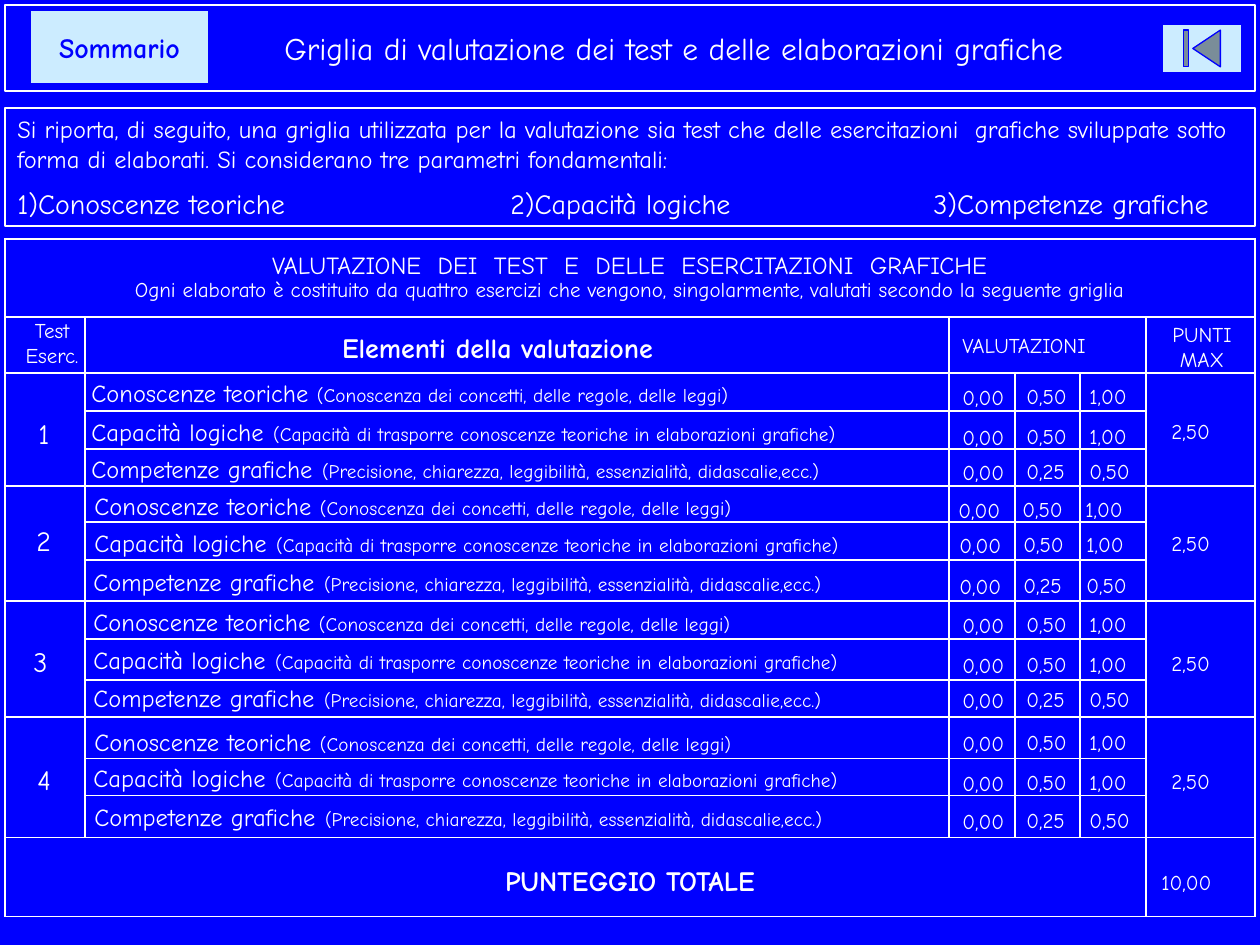
from dataclasses import dataclass

from lxml import etree
from pptx import Presentation
from pptx import util as u
from pptx.dml.color import RGBColor
from pptx.enum import shapes, text
from pptx.oxml import ns

EMU_PER_PX = 914400 / 126
CENTER, LEFT = text.PP_ALIGN.CENTER, text.PP_ALIGN.LEFT


@dataclass(frozen=True)
class Theme:
    font: str = "Comic Neue"
    blue: RGBColor = RGBColor(0, 0, 255)
    white: RGBColor = RGBColor(255, 255, 255)
    button: RGBColor = RGBColor(0xCC, 0xEC, 0xFF)
    title: int = 18
    large: int = 16
    body: int = 14
    small: int = 12
    detail: int = 11


@dataclass(frozen=True)
class Criterion:
    name: str
    detail: str
    gap_size: int
    height: int
    scores: tuple[str, str, str]


@dataclass(frozen=True)
class Row:
    label_x: int
    label_y: int
    score_x: int
    score_y: int


@dataclass(frozen=True)
class Exercise:
    number: str
    x: int
    y: int
    points_y: int
    rows: tuple[Row, Row, Row]


T = Theme()

CRITERIA = (
    Criterion("Conoscenze teoriche", "(Conoscenza dei concetti, delle regole, delle leggi)",
              T.body, 42, ("0,00", "0,50", "1,00")),
    Criterion("Capacità logiche",
              "(Capacità di trasporre conoscenze teoriche in elaborazioni grafiche)",
              T.large, 46, ("0,00", "0,50", "1,00")),
    Criterion("Competenze grafiche",
              "(Precisione, chiarezza, leggibilità, essenzialità, didascalie,ecc.)",
              T.large, 46, ("0,00", "0,25", "0,50")),
)
EXERCISES = (
    Exercise("1", 26, 410, 412,
             (Row(79, 372, 950, 377), Row(79, 407, 950, 417), Row(79, 444, 950, 452))),
    Exercise("2", 24, 517, 524,
             (Row(82, 485, 946, 490), Row(82, 518, 947, 525), Row(81, 557, 947, 566))),
    Exercise("3", 21, 638, 644,
             (Row(81, 601, 950, 605), Row(81, 635, 950, 645), Row(81, 673, 950, 680))),
    Exercise("4", 25, 756, 762,
             (Row(82, 721, 950, 723), Row(81, 753, 950, 763), Row(82, 792, 950, 801))),
)
COLUMNS = (80, 864, 66, 65, 66, 109)
ROW_HEIGHTS = (78, 56, 38, 38, 37, 36, 38, 41, 38, 41, 37, 42, 37, 42, 79)


def px(value: int) -> int:
    return u.Emu(round(value * EMU_PER_PX))


def box(x: int, y: int, w: int, h: int) -> tuple[int, ...]:
    return tuple(px(v) for v in (x, y, w, h))


def style(p, size: int, align=LEFT, bold: bool = False, color: RGBColor = T.white) -> None:
    p.alignment = align
    p.font.name, p.font.size, p.font.bold = T.font, u.Pt(size), bold
    p.font.color.rgb = color


def add_text(s, words: str, x: int, y: int, w: int, h: int, size: int,
             align=LEFT, bold: bool = False):
    tf = s.shapes.add_textbox(*box(x, y, w, h)).text_frame
    tf.word_wrap = True
    tf.auto_size = text.MSO_AUTO_SIZE.SHAPE_TO_FIT_TEXT
    p = tf.paragraphs[0]
    p.text = words
    style(p, size, align, bold)
    return p


def add_button(s, kind, x: int, y: int, w: int, h: int):
    sp = s.shapes.add_shape(kind, *box(x, y, w, h))
    sp.shadow.inherit = False
    sp.fill.solid()
    sp.fill.fore_color.rgb = T.button
    sp.line.color.rgb = T.blue
    sp.line.width = 0
    return sp


def outline_cell(cell) -> None:
    props = cell._tc.get_or_add_tcPr()
    for side in ("a:lnL", "a:lnR", "a:lnT", "a:lnB"):
        line = etree.SubElement(props, ns.qn(side), w=str(u.Pt(1)))
        fill = etree.SubElement(line, ns.qn("a:solidFill"))
        etree.SubElement(fill, ns.qn("a:srgbClr"), val=str(T.white))
    cell.fill.background()


def add_grid(s) -> None:
    frame = s.shapes.add_table(len(ROW_HEIGHTS), len(COLUMNS),
                               *box(5, 239, sum(COLUMNS), sum(ROW_HEIGHTS)))
    table = frame.table
    table.first_row = table.horz_banding = False
    for column, width in zip(table.columns, COLUMNS):
        column.width = px(width)
    for row, height in zip(table.rows, ROW_HEIGHTS):
        row.height = px(height)
    for cell in table.iter_cells():
        outline_cell(cell)
        cell.margin_top = cell.margin_bottom = 0
        style(cell.text_frame.paragraphs[0], T.small)

    # Merged areas: heading, scores, exercises, points, total
    spans = [(0, 0, 0, 5), (1, 2, 1, 4), (14, 0, 14, 4)]
    spans += [(r, c, r + 2, c) for r in range(2, 14, 3) for c in (0, 5)]
    for top, left, bottom, right in spans:
        table.cell(top, left).merge(table.cell(bottom, right))

    heading = table.cell(0, 0)
    heading.vertical_anchor = text.MSO_ANCHOR.MIDDLE
    heading.text = ("VALUTAZIONE  DEI  TEST  E  DELLE  ESERCITAZIONI  GRAFICHE\n"
                    "Ogni elaborato è costituito da quattro esercizi che vengono, "
                    "singolarmente, valutati secondo la seguente griglia")
    for p, size in zip(heading.text_frame.paragraphs, (T.body, T.small)):
        style(p, size, CENTER)
        p.line_spacing = 0.9


def add_exercise(s, exercise: Exercise) -> None:
    add_text(s, exercise.number, exercise.x, exercise.y, 42, 46, T.large)
    add_text(s, "2,50", 1159, exercise.points_y, 83, 38, T.small)
    for row, criterion in zip(exercise.rows, CRITERIA):
        p = add_text(s, criterion.name, row.label_x, row.label_y, 848, criterion.height, T.body)
        for words, size in ((" ", criterion.gap_size), (criterion.detail, T.detail)):
            r = p.add_run()
            r.text = words
            r.font.size = u.Pt(size)
        for score, dx, dy, width in zip(criterion.scores, (0, 64, 127), (1, 0, 0), (78, 78, 71)):
            add_text(s, score, row.score_x + dx, row.score_y + dy, width, 38, T.small)


def main() -> None:
    prs = Presentation()
    prs.slide_width, prs.slide_height = u.Inches(10), u.Inches(7.5)
    s = prs.slides.add_slide(prs.slide_layouts[5])
    s.background.fill.solid()
    s.background.fill.fore_color.rgb = T.blue

    # Title bar and navigation buttons
    title = s.shapes.title
    title.left, title.top, title.width, title.height = box(5, 5, 1250, 86)
    title.line.color.rgb = T.white
    title.line.width = u.Pt(0.75)
    tf = title.text_frame
    tf.text = "Griglia di valutazione dei test e delle elaborazioni grafiche"
    tf.vertical_anchor = text.MSO_ANCHOR.MIDDLE
    tf.margin_left = px(100)
    style(tf.paragraphs[0], T.title, CENTER)

    summary = add_button(s, shapes.MSO_SHAPE.ACTION_BUTTON_CUSTOM, 30, 10, 179, 74)
    summary.text_frame.text = "Sommario"
    summary.text_frame.vertical_anchor = text.MSO_ANCHOR.MIDDLE
    style(summary.text_frame.paragraphs[0], T.large, CENTER, True, T.blue)
    add_button(s, shapes.MSO_SHAPE.ACTION_BUTTON_BEGINNING, 1162, 24, 80, 49)

    # Introduction and the three parameters
    intro = s.shapes.add_shape(shapes.MSO_SHAPE.RECTANGLE, *box(5, 108, 1250, 118))
    intro.shadow.inherit = False
    intro.fill.background()
    intro.line.color.rgb = T.white
    intro.line.width = u.Pt(1)
    tf = intro.text_frame
    tf.word_wrap = True
    tf.vertical_anchor = text.MSO_ANCHOR.TOP
    tf.text = ("Si riporta, di seguito, una griglia utilizzata per la valutazione sia test che "
               "delle esercitazioni  grafiche sviluppate sotto forma di elaborati. "
               "Si considerano tre parametri fondamentali:")
    style(tf.paragraphs[0], T.body)
    for i, (criterion, x, width) in enumerate(zip(CRITERIA, (5, 498, 921), (328, 265, 334)), 1):
        add_text(s, f"{i}){criterion.name}", x, 180, width, 46, T.large)

    # Evaluation grid with its headings, exercises and total
    add_grid(s)
    add_text(s, "Test Eserc.", 6, 311, 92, 63, T.small, CENTER)
    add_text(s, "Elementi della valutazione", 304, 324, 387, 46, T.large, CENTER, True)
    add_text(s, "VALUTAZIONI", 950, 326, 194, 38, T.small)
    add_text(s, "PUNTI MAX", 1147, 315, 110, 63, T.small, CENTER)
    for exercise in EXERCISES:
        add_exercise(s, exercise)
    add_text(s, "PUNTEGGIO TOTALE", 431, 857, 398, 46, T.large, CENTER, True)
    add_text(s, "10,00", 1149, 863, 83, 38, T.small)

    prs.save("out.pptx")


if __name__ == "__main__":
    main()
